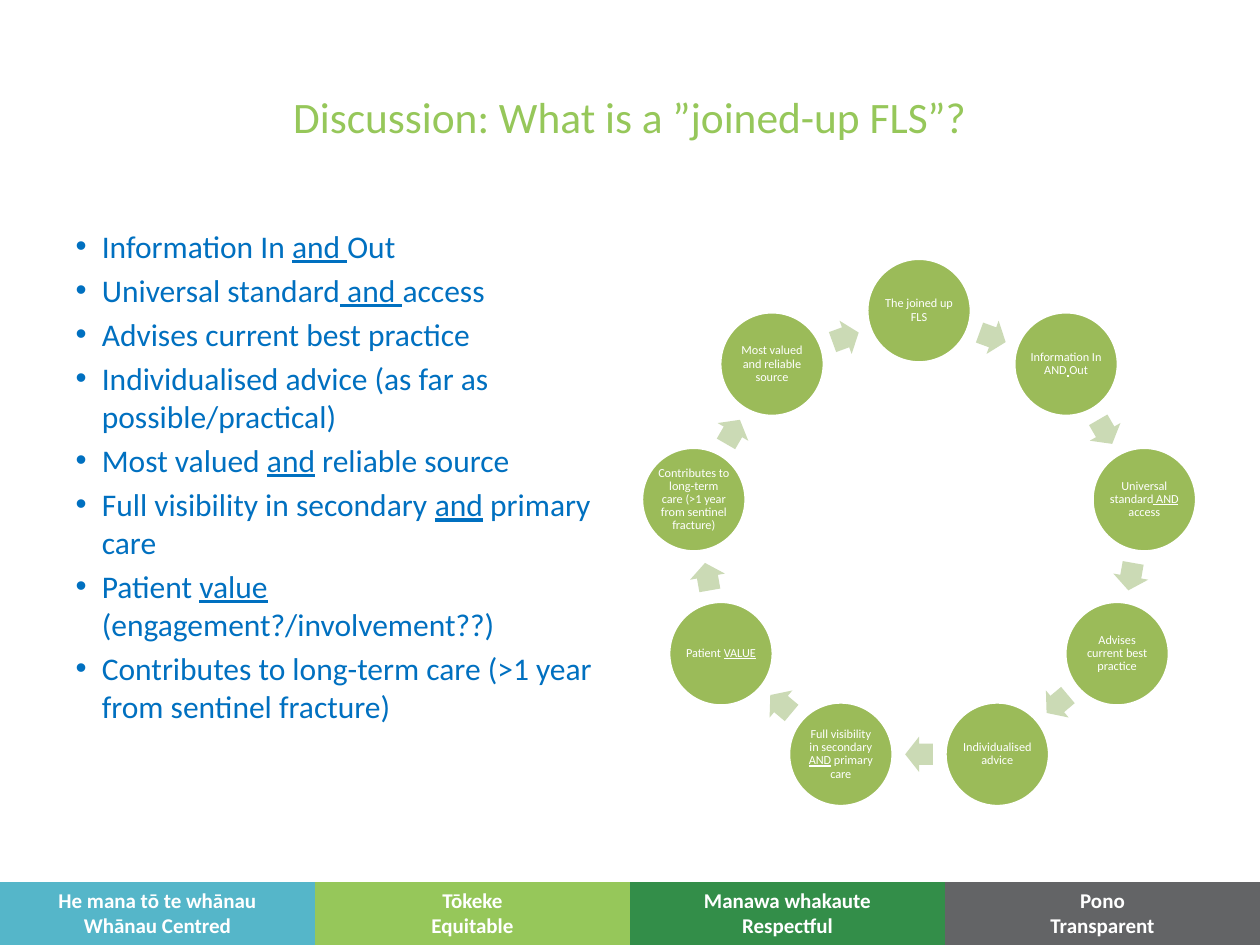
from math import cos, pi, radians, sin

from lxml import etree
from pptx import Presentation
from pptx.dml.color import RGBColor
from pptx.enum.shapes import MSO_SHAPE
from pptx.enum.text import MSO_ANCHOR, MSO_AUTO_SIZE, PP_ALIGN
from pptx.oxml.ns import qn
from pptx.util import Pt

CENTER = PP_ALIGN.CENTER
MIDDLE = MSO_ANCHOR.MIDDLE
NO_AUTOFIT = MSO_AUTO_SIZE.NONE
OVAL = MSO_SHAPE.OVAL
ARROW = MSO_SHAPE.RIGHT_ARROW

FONT = "Calibri"
NO_GRID_STYLE = "{2D5ABB26-0587-4C30-8999-92F81FD0307C}"

TITLE = "Discussion: What is a ”joined-up FLS”?"
POINTS = [
    "Information In _and _Out",
    "Universal standard_ and _access",
    "Advises current best practice",
    "Individualised advice (as far as possible/practical)",
    "Most valued _and_ reliable source",
    "Full visibility in secondary _and_ primary care",
    "Patient _value_ (engagement?/involvement??)",
    "Contributes to long-term care (>1 year from sentinel fracture)",
]
STEPS = [
    "The joined up FLS",
    "Information In AND_ _Out",
    "Universal standard_ AND _access",
    "Advises current best practice",
    "Individualised advice",
    "Full visibility in secondary _AND_ primary care",
    "Patient _VALUE_",
    "Contributes to long-term care (>1 year from sentinel fracture)",
    "Most valued and reliable source",
]
VALUES = [
    ("He mana tō te whānau", "Whānau Centred", "55B6C9"),
    ("Tōkeke", "Equitable", "96C75A"),
    ("Manawa whakaute", "Respectful", "338E49"),
    ("Pono", "Transparent", "636466"),
]


def rgb(color):
    """Turn a hex string into a colour."""
    return RGBColor.from_string(color)


def paint(fill, color):
    """Fill with one solid colour."""
    fill.solid()
    fill.fore_color.rgb = rgb(color)


def add_runs(p, text, size, color, bold=False):
    """Add text run by run, underlining what stands between underscores."""
    for i, part in enumerate(text.split("_")):
        if part:
            r = p.add_run()
            r.text = part
            r.font.name, r.font.size, r.font.bold = FONT, Pt(size), bold
            r.font.underline = i % 2 == 1
            r.font.color.rgb = rgb(color)


def place(s, x, y, w, h):
    """Move and size a shape, in points."""
    s.left, s.top, s.width, s.height = Pt(x), Pt(y), Pt(w), Pt(h)


def fill_title(s, x, y, w, h):
    """Write the title in its placeholder."""
    place(s, x, y, w, h)
    tf = s.text_frame
    tf.auto_size = NO_AUTOFIT
    tf.vertical_anchor = MIDDLE
    p = tf.paragraphs[0]
    p.alignment = CENTER
    add_runs(p, TITLE, 24.8, "96C75A")


def fill_points(s, x, y, w, h):
    """Write the bulleted list in the body placeholder."""
    place(s, x, y, w, h)
    tf = s.text_frame
    tf.auto_size = NO_AUTOFIT
    for i, text in enumerate(POINTS):
        p = tf.add_paragraph() if i else tf.paragraphs[0]
        p.space_before = Pt(3.6 if i else 0)
        pPr = p._p.get_or_add_pPr()
        pPr.set("marL", str(Pt(15)))
        pPr.set("indent", str(-Pt(15)))
        etree.SubElement(pPr, qn("a:buChar")).set("char", "•")
        add_runs(p, text, 18, "0070C0")


def add_plain(shapes, kind, cx, cy, w, h, color):
    """Add a filled shape centred on a point."""
    s = shapes.add_shape(kind, Pt(cx - w / 2), Pt(cy - h / 2), Pt(w), Pt(h))
    s.shadow.inherit = False
    paint(s.fill, color)
    s.line.fill.background()
    return s


def add_cycle(shapes, x, y, size, disc=59.8):
    """Draw a ring of labelled discs with an arrow after each one."""
    radius = (size - disc) / 2
    cx, cy = x + size / 2, y + size / 2
    step = 360 / len(STEPS)
    arrow_radius = radius * cos(pi / len(STEPS))
    for i, text in enumerate(STEPS):
        a = radians(i * step)
        s = add_plain(shapes, OVAL, cx + radius * sin(a), cy - radius * cos(a),
                      disc, disc, "9BBB59")
        s.line.color.rgb = rgb("FFFFFF")
        s.line.width = Pt(2)
        tf = s.text_frame
        tf.word_wrap = True
        tf.vertical_anchor = MIDDLE
        tf.margin_left = tf.margin_right = Pt(0.7)
        tf.margin_top = tf.margin_bottom = Pt(0.7)
        p = tf.paragraphs[0]
        p.alignment = CENTER
        p.line_spacing = 0.9
        add_runs(p, text, 7, "FFFFFF")

        turn = (i + 0.5) * step
        a = radians(turn)
        s = add_plain(shapes, ARROW, cx + arrow_radius * sin(a),
                      cy - arrow_radius * cos(a), 15.9, 20.2, "CBDAB5")
        s.adjustments[0], s.adjustments[1] = 0.6, 0.5
        s.rotation = turn


def add_values(shapes, x, y, w, h):
    """Add the band of values as a one-row table."""
    frame = shapes.add_table(1, len(VALUES), Pt(x), Pt(y), Pt(w), Pt(h))
    table = frame.table
    table.first_row = table.horz_banding = False
    table._tbl.tblPr.find(qn("a:tableStyleId")).text = NO_GRID_STYLE
    for cell, (maori, english, color) in zip(table.rows[0].cells, VALUES):
        paint(cell.fill, color)
        cell.vertical_anchor = MIDDLE
        tf = cell.text_frame
        for p, text in ((tf.paragraphs[0], maori), (tf.add_paragraph(), english)):
            p.alignment = CENTER
            add_runs(p, text, 12, "FFFFFF", bold=True)


def main():
    """Build the slide and save it."""
    prs = Presentation()
    prs.slide_width, prs.slide_height = Pt(720), Pt(540)
    slide = prs.slides.add_slide(prs.slide_layouts[1])
    shapes = slide.shapes
    add_values(shapes, 0, 504, 720, 36)
    fill_title(shapes.title, 36, 21.6, 648, 90)
    fill_points(slide.placeholders[1], 36, 126, 318, 356.4)
    add_cycle(shapes, 364.6, 147.6, 321.2)
    prs.save("out.pptx")


if __name__ == "__main__":
    main()
